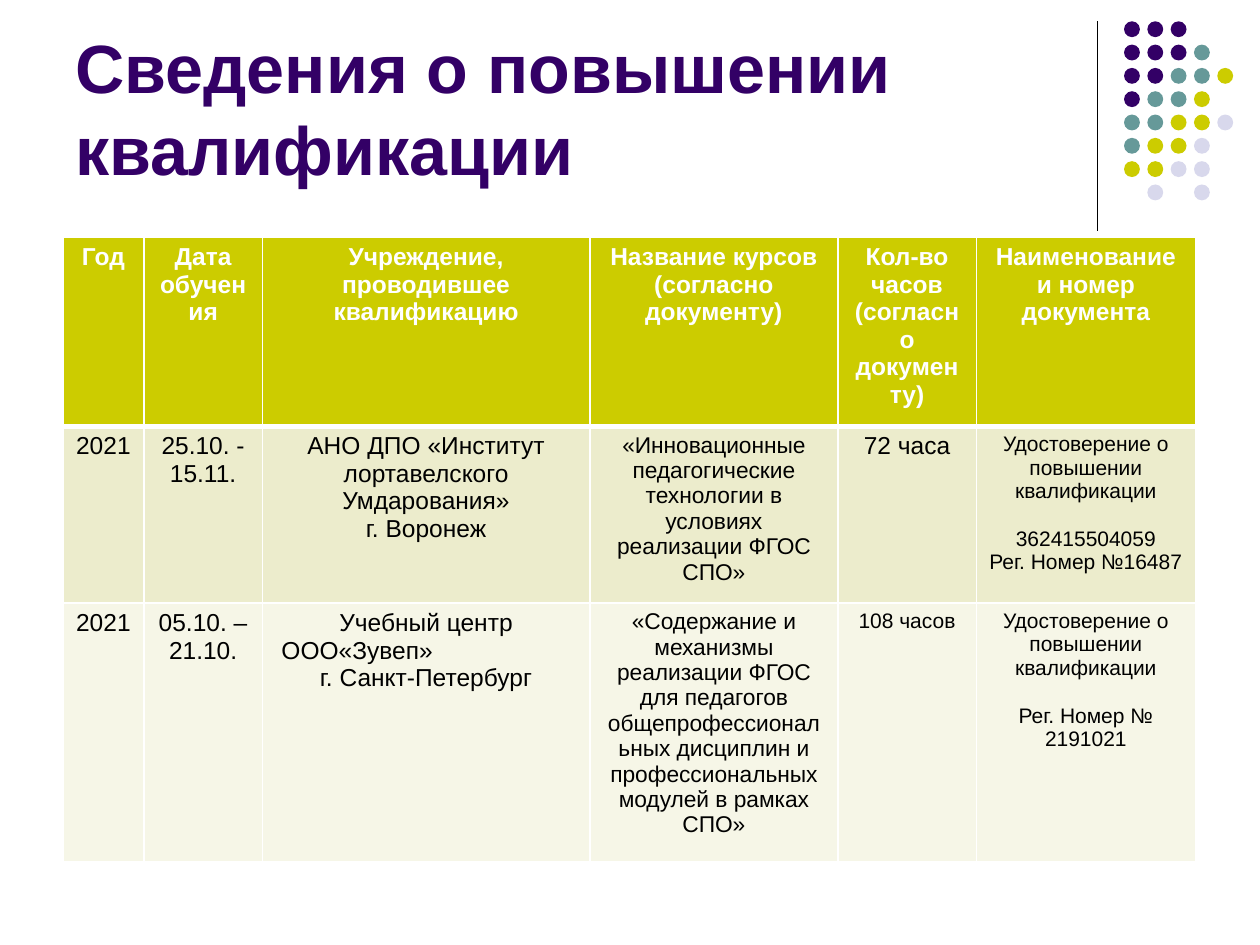
import pptx
import pptx.util
import pptx.dml.color
import pptx.enum.shapes
import pptx.enum.text
import pptx.oxml.ns
import lxml.etree

Cm = pptx.util.Cm
Pt = pptx.util.Pt
ALIGN = pptx.enum.text.PP_ALIGN
FONT = "Arial"
INK = {
    "violet": "330066", "teal": "669999", "lime": "CCCC00", "pale": "D8D8EC",
    "black": "000000", "white": "FFFFFF", "sand": "ECECCC", "cream": "F6F6E7",
}
DOTS = ["VVV", "VVVT", "VVTTL", "VTTL", "TTLLP", "TLLP", "LLPP", " P P"]
HUES = {"V": "violet", "T": "teal", "L": "lime", "P": "pale"}
COLS = [1.63, 2.39, 6.6, 5, 2.79, 4.42]
ROWS = [
    (3.81, "lime", "white", True, [
        (14, "Год"),
        (14, "Дата обучения"),
        (14, "Учреждение, проводившее квалификацию"),
        (14, "Название курсов (согласно документу)"),
        (14, "Кол-во часов (согласно документу)"),
        (14, "Наименование и номер документа"),
    ]),
    (3.56, "sand", "black", False, [
        (14, "2021"),
        (14, "25.10. - 15.11."),
        (14, "АНО ДПО «Институт лортавелского Умдарования»\nг. Воронеж"),
        (13, "«Инновационные педагогические технологии в условиях "
             "реализации ФГОС СПО»"),
        (14, "72 часа"),
        (12, "Удостоверение о повышении квалификации\n\n"
             "362415504059\nРег. Номер №16487"),
    ]),
    (5.21, "cream", "black", False, [
        (14, "2021"),
        (14, "05.10. – 21.10."),
        (14, "Учебный центр\nООО«Зувеп»\nг. Санкт-Петербург"),
        (13, "«Содержание и механизмы реализации ФГОС для педагогов "
             "общепрофессиональных дисциплин и профессиональных модулей "
             "в рамках СПО»"),
        (12, "108 часов"),
        (12, "Удостоверение о повышении квалификации\n\n"
             "Рег. Номер №\n2191021"),
    ]),
]


def rgb(name):
    return pptx.dml.color.RGBColor.from_string(INK[name])


def style(para, size, hue, bold):
    para.font.name = FONT
    para.font.size = Pt(size)
    para.font.bold = bold
    para.font.color.rgb = rgb(hue)


def add_rule(slide, x, y, high):
    rule = slide.shapes.add_connector(
        pptx.enum.shapes.MSO_CONNECTOR.STRAIGHT, Cm(x), Cm(y), Cm(x), Cm(y + high))
    rule.line.color.rgb = rgb("black")
    rule.line.width = Pt(0.75)
    props = rule._element.spPr
    lxml.etree.SubElement(props, pptx.oxml.ns.qn("a:effectLst"))


def add_dots(slide, x, y, step, size):
    group = slide.shapes.add_group_shape()
    for row, marks in enumerate(DOTS):
        for col, mark in enumerate(marks):
            if mark == " ":
                continue
            dot = group.shapes.add_shape(
                pptx.enum.shapes.MSO_SHAPE.OVAL,
                Cm(x + col * step), Cm(y + row * step), Cm(size), Cm(size))
            dot.shadow.inherit = False
            dot.fill.solid()
            dot.fill.fore_color.rgb = rgb(HUES[mark])
            dot.line.fill.background()


def add_title(slide, x, y, wide, high):
    box = slide.shapes.add_textbox(Cm(x), Cm(y), Cm(wide), Cm(high))
    frame = box.text_frame
    frame.word_wrap = True
    frame.vertical_anchor = pptx.enum.text.MSO_ANCHOR.BOTTOM
    frame.text = "Сведения о повышении квалификации"
    style(frame.paragraphs[0], 39, "violet", True)


def add_edges(cell, top, base):
    props = cell._tc.get_or_add_tcPr()
    for side, width in zip("LRTB", (1, 1, top, base)):
        line = lxml.etree.SubElement(
            props, pptx.oxml.ns.qn("a:ln" + side), w=str(Pt(width)))
        fill = lxml.etree.SubElement(line, pptx.oxml.ns.qn("a:solidFill"))
        lxml.etree.SubElement(
            fill, pptx.oxml.ns.qn("a:srgbClr"), val=INK["white"])


def fill_cell(cell, text, size, hue, bold):
    frame = cell.text_frame
    para = frame.paragraphs[0]
    for part, block in enumerate(text.split("\n\n")):
        for num, line in enumerate(block.split("\n")):
            if part or num:
                para = frame.add_paragraph()
            para.text = line
            para.alignment = ALIGN.CENTER
            style(para, size, hue, bold)
            if part and not num:
                para.space_before = Pt(size * 1.15)


def add_grid(slide, x, y):
    high = sum(row[0] for row in ROWS)
    table = slide.shapes.add_table(
        len(ROWS), len(COLS), Cm(x), Cm(y), Cm(sum(COLS)), Cm(high)).table
    for col, wide in zip(table.columns, COLS):
        col.width = Cm(wide)
    for r, (tall, back, hue, bold, cells) in enumerate(ROWS):
        table.rows[r].height = Cm(tall)
        for c, (size, text) in enumerate(cells):
            cell = table.cell(r, c)
            fill_cell(cell, text, size, hue, bold)
            add_edges(cell, 3 if r == 1 else 1, 3 if r == 0 else 1)
            cell.fill.solid()
            cell.fill.fore_color.rgb = rgb(back)
    firm = table.cell(2, 2).text_frame.paragraphs[1]
    firm.alignment = ALIGN.LEFT
    firm._p.get_or_add_pPr().set("marL", str(Cm(0.13)))


def main():
    deck = pptx.Presentation()
    deck.slide_width = Cm(25.4)
    deck.slide_height = Cm(19.05)
    slide = deck.slides.add_slide(deck.slide_layouts[6])
    add_rule(slide, 22.12, 0.43, 4.22)
    add_dots(slide, 22.66, 0.43, 0.47, 0.32)
    add_title(slide, 1.27, 0.33, 20.96, 3.61)
    add_grid(slide, 1.27, 4.78)
    deck.save("out.pptx")


if __name__ == "__main__":
    main()
